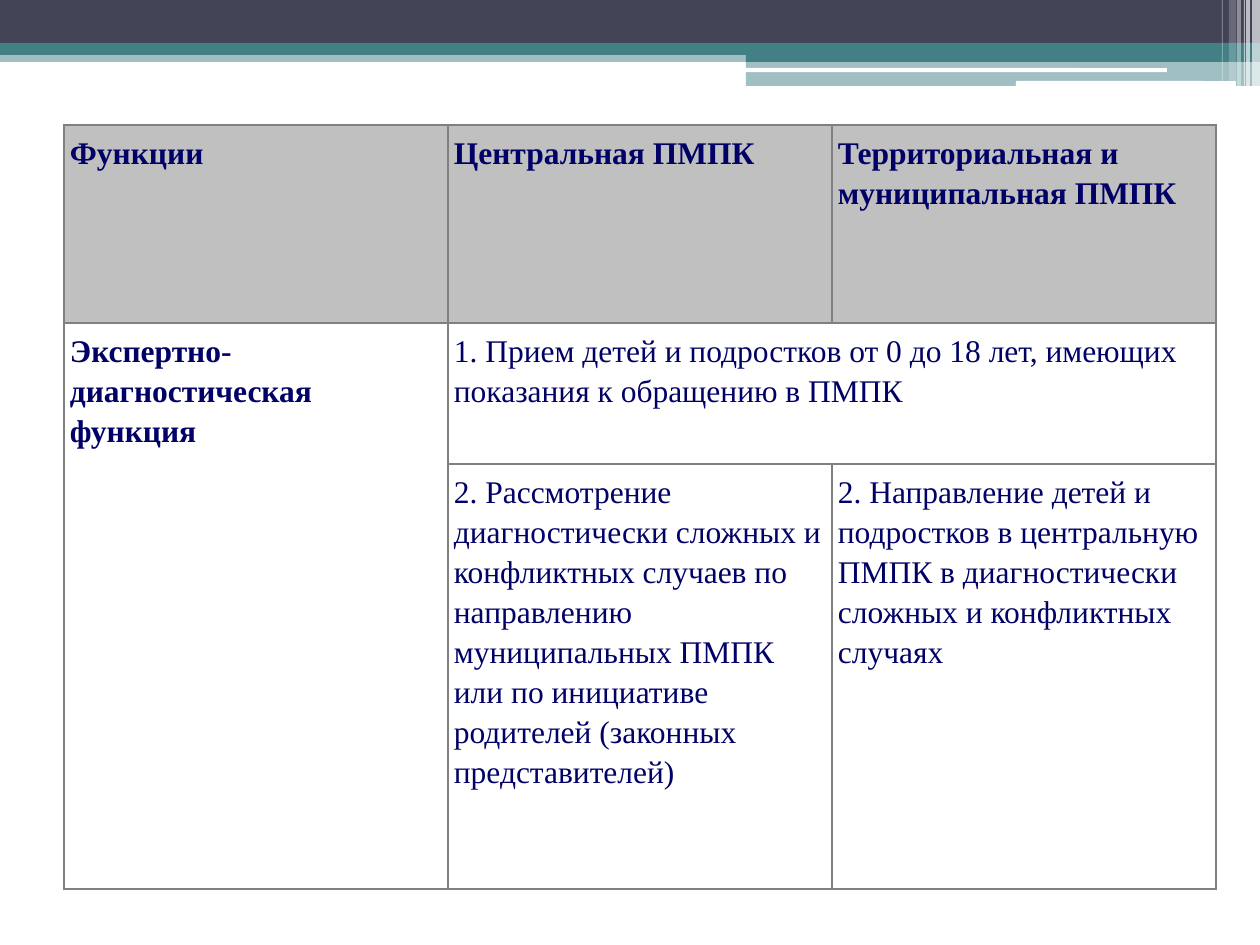
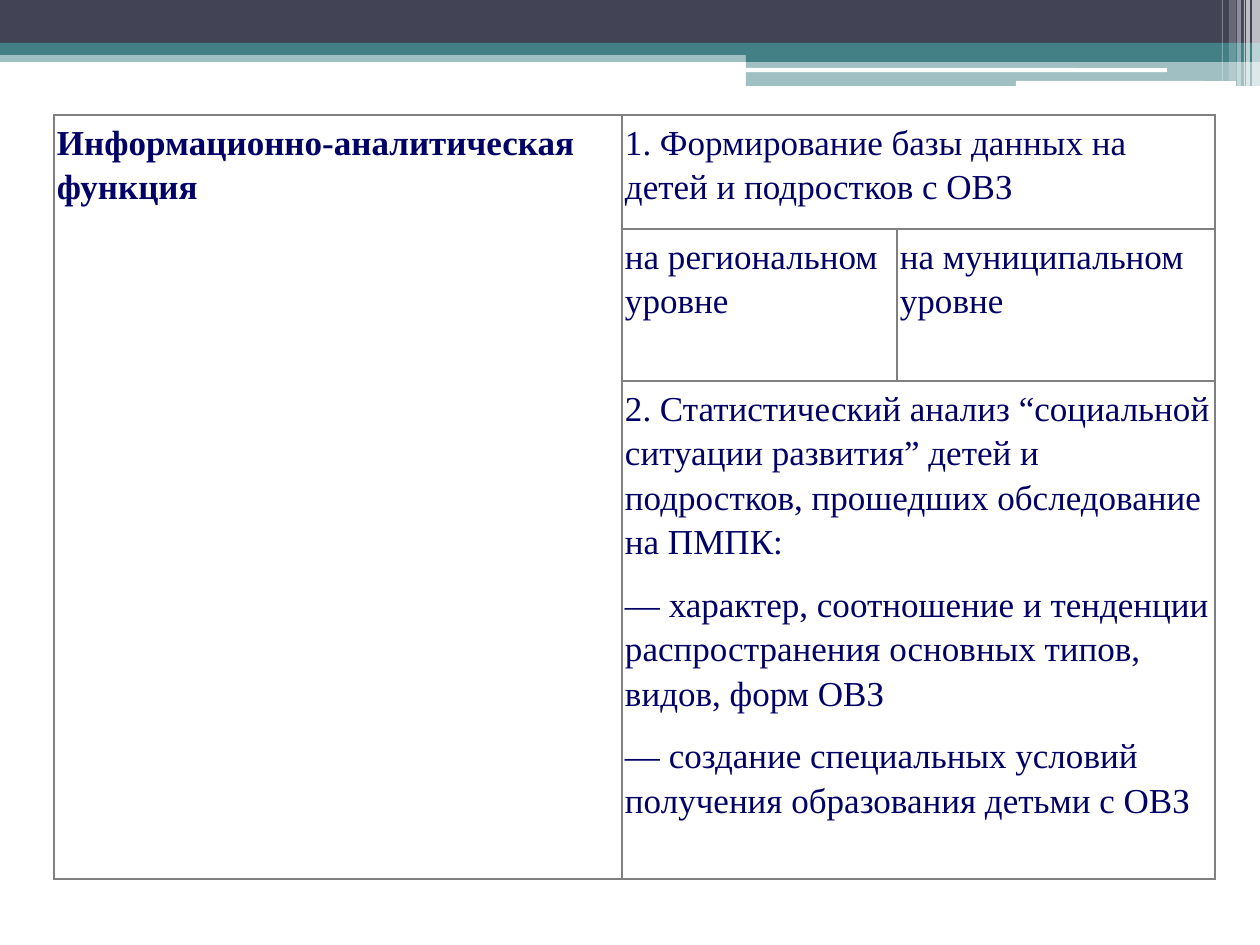
from lxml.etree import SubElement
from pptx import Presentation
from pptx.dml.color import RGBColor
from pptx.enum.shapes import MSO_SHAPE
from pptx.oxml.ns import qn
from pptx.util import Emu, Pt

EMU_PER_PIXEL = 914400 / 126
SLIDE_BOX = (0, 0, 1260, 945)
FONT = "Times New Roman"
DARK, TEAL, WHITE = "424456", "438086", "FFFFFF"
NAVY, SILVER, GREY = "000066", "C0C0C0", "808080"

BANDS = [
    (0, 50, 1260, 12, TEAL, 50),
    (0, 0, 1260, 43, DARK, 100),
    (0, 43, 1260, 12, TEAL, 100),
    (746, 49, 514, 13, TEAL, 100),
    (746, 61, 514, 25, TEAL, 50),
]
ROUNDED_STRIPS = [(745, 68, 422, 4), (1016, 81, 220, 5)]
EDGE_STRIPES = [
    (1252, 8, 86, 65),
    (1246, 4, 86, 65),
    (1244, 1, 86, 60),
    (1237, 4, 86, 40),
    (1229, 7, 81, 20),
    (1222, 1, 81, 30),
]

FUNCTIONS_TABLE = {
    "box": (64, 125, 1152, 764),
    "columns": [384, 384, 384],
    "rows": [198, 141, 425],
    "merges": [(1, 0, 2, 0), (1, 1, 1, 2)],
    "size": 18,
    "margin": 6,
    "header": True,
    "cells": {
        (0, 0): "Функции",
        (0, 1): "Центральная ПМПК",
        (0, 2): "Территориальная и муниципальная ПМПК",
        (1, 0): "Экспертно-диагностическая функция",
        (1, 1): "1. Прием детей и подростков от 0 до 18 лет, имеющих показания "
                "к обращению в ПМПК",
        (2, 1): "2. Рассмотрение диагностически сложных и конфликтных случаев "
                "по направлению муниципальных ПМПК или по инициативе родителей "
                "(законных представителей)",
        (2, 2): "2. Направление детей и подростков в центральную ПМПК "
                "в диагностически сложных и конфликтных случаях",
    },
}

ANALYTICS_TABLE = {
    "box": (54, 115, 1161, 764),
    "columns": [568, 275, 318],
    "rows": [114, 152, 498],
    "merges": [(0, 0, 2, 0), (0, 1, 0, 2), (2, 1, 2, 2)],
    "size": 20,
    "margin": 3,
    "header": False,
    "cells": {
        (0, 0): "Информационно-аналитическая функция",
        (0, 1): "1. Формирование базы данных на детей и подростков с ОВЗ",
        (1, 1): "на региональном уровне",
        (1, 2): "на муниципальном уровне",
        (2, 1): "2. Статистический анализ “социальной ситуации развития” детей "
                "и подростков, прошедших обследование на ПМПК:\n"
                "— характер, соотношение и тенденции распространения основных "
                "типов, видов, форм ОВЗ\n"
                "— создание специальных условий получения образования детьми с ОВЗ",
    },
}


def px(length):
    """Turn pixels into EMU."""
    return Emu(round(length * EMU_PER_PIXEL))


def color(value):
    """Turn a hex string into a colour."""
    return RGBColor.from_string(value)


def add_block(slide, box, fill, opacity=100, kind=MSO_SHAPE.RECTANGLE):
    """Add a borderless filled shape with the given opacity in percent."""
    shape = slide.shapes.add_shape(kind, *map(px, box))
    shape.shadow.inherit = False
    shape.fill.solid()
    shape.fill.fore_color.rgb = color(fill)
    shape.line.fill.background()
    if opacity < 100:
        fill_color = shape.element.spPr.find(qn("a:solidFill")).find(qn("a:srgbClr"))
        SubElement(fill_color, qn("a:alpha"), val=str(opacity * 1000))
    return shape


def add_header_band(slide, box):
    """Draw the layered band and the edge stripes at the top of the box."""
    left, top = box[:2]
    for x, y, width, height, fill, opacity in BANDS:
        add_block(slide, (left + x, top + y, width, height), fill, opacity)
    for x, y, width, height in ROUNDED_STRIPS:
        add_block(slide, (left + x, top + y, width, height), WHITE,
                  kind=MSO_SHAPE.ROUNDED_RECTANGLE)
    for x, width, height, opacity in EDGE_STRIPES:
        add_block(slide, (left + x, top, width, height), WHITE, opacity)


def add_borders(cell):
    """Draw a thin grey line on each side of the cell."""
    properties = cell._tc.get_or_add_tcPr()
    for side in ("a:lnL", "a:lnR", "a:lnT", "a:lnB"):
        line = SubElement(properties, qn(side), w=str(Pt(1)))
        fill = SubElement(line, qn("a:solidFill"))
        SubElement(fill, qn("a:srgbClr"), val=GREY)


def style_cell(cell, margin, fill):
    """Set the borders, margins and fill of a cell."""
    add_borders(cell)
    cell.margin_left = cell.margin_right = px(margin)
    cell.margin_top = cell.margin_bottom = px(margin)
    if fill:
        cell.fill.solid()
        cell.fill.fore_color.rgb = color(fill)
    else:
        cell.fill.background()


def write_cell(cell, text, size, bold):
    """Write the text of a cell, one paragraph a line."""
    cell.text_frame.text = text
    for paragraph in cell.text_frame.paragraphs:
        paragraph.line_spacing = 1.15
        paragraph.space_after = Pt(10)
        for run in paragraph.runs:
            run.font.name = FONT
            run.font.size = Pt(size)
            run.font.bold = bold
            run.font.color.rgb = color(NAVY)


def add_content_table(slide, content):
    """Add a table of commission functions in its box."""
    columns, rows = content["columns"], content["rows"]
    frame = slide.shapes.add_table(len(rows), len(columns), *map(px, content["box"]))
    table = frame.table
    table.first_row = table.horz_banding = False
    for column, width in zip(table.columns, columns):
        column.width = px(width)
    for row, height in zip(table.rows, rows):
        row.height = px(height)
    for row_index in range(len(rows)):
        is_header = content["header"] and row_index == 0
        for column_index in range(len(columns)):
            cell = table.cell(row_index, column_index)
            style_cell(cell, content["margin"], SILVER if is_header else None)
            text = content["cells"].get((row_index, column_index))
            if text:
                write_cell(cell, text, content["size"], is_header or column_index == 0)
    for top, left, bottom, right in content["merges"]:
        table.cell(top, left).merge(table.cell(bottom, right))


def main():
    """Build both slides and save the presentation."""
    presentation = Presentation()
    presentation.slide_width, presentation.slide_height = map(px, SLIDE_BOX[2:])
    for content in (FUNCTIONS_TABLE, ANALYTICS_TABLE):
        slide = presentation.slides.add_slide(presentation.slide_layouts[6])
        add_header_band(slide, SLIDE_BOX)
        add_content_table(slide, content)
    presentation.save("out.pptx")


if __name__ == "__main__":
    main()
